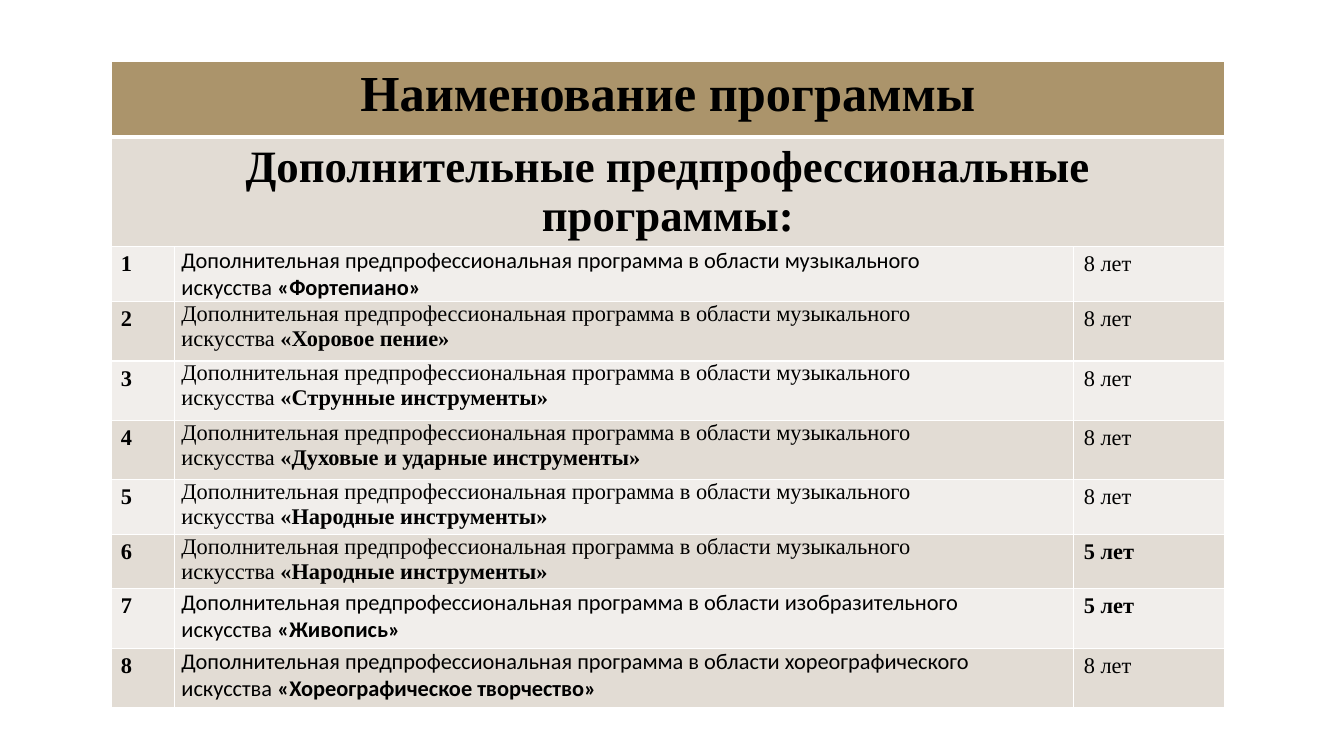
from dataclasses import dataclass

from lxml import etree
from pptx import Presentation
from pptx.dml.color import RGBColor
from pptx.enum.text import PP_ALIGN
from pptx.oxml.ns import qn
from pptx.table import Table, _Cell
from pptx.util import Inches, Pt

CENTER, LEFT, JUSTIFY = PP_ALIGN.CENTER, PP_ALIGN.LEFT, PP_ALIGN.JUSTIFY
BLACK = RGBColor(0x00, 0x00, 0x00)
WHITE = RGBColor(0xFF, 0xFF, 0xFF)
GOLD = RGBColor(0xAB, 0x94, 0x6B)
DARK = RGBColor(0xE2, 0xDC, 0xD4)
LIGHT = RGBColor(0xF1, 0xEE, 0xEB)
SERIF, SANS = "Times New Roman", "Calibri"
WIDTHS = (0.63, 8.92, 1.5)


@dataclass
class Course:
    name: str
    term: str = "8 лет"
    field: str = "музыкального"
    font: str = SERIF
    height: float = 0.59
    bold: bool = False


@dataclass
class Head:
    text: str
    size: int
    fill: RGBColor
    height: float


HEADS = [
    Head("Наименование программы", 36, GOLD, 0.75),
    Head("Дополнительные предпрофессиональные программы:", 32, DARK, 1.08),
]
COURSES = [
    Course("Фортепиано", font=SANS, height=0.54),
    Course("Хоровое пение"),
    Course("Струнные инструменты"),
    Course("Духовые и ударные инструменты"),
    Course("Народные инструменты", height=0.54),
    Course("Народные инструменты", "5 лет", height=0.54, bold=True),
    Course("Живопись", "5 лет", "изобразительного", SANS, bold=True),
    Course("Хореографическое творчество", field="хореографического", font=SANS),
]


def paint(cell: _Cell, fill: RGBColor, top: int = 1, bottom: int = 1) -> None:
    """Give a cell its white borders and its fill."""
    props = cell._tc.get_or_add_tcPr()
    for tag, width in (("lnL", 1), ("lnR", 1), ("lnT", top), ("lnB", bottom)):
        line = etree.SubElement(props, qn(f"a:{tag}"), w=str(Pt(width)))
        solid = etree.SubElement(line, qn("a:solidFill"))
        etree.SubElement(solid, qn("a:srgbClr"), val=str(WHITE))
    cell.fill.solid()
    cell.fill.fore_color.rgb = fill


def write(cell: _Cell, lines: list[str], size: int = 16, font: str = SERIF,
          bold: bool = False, align: PP_ALIGN = LEFT) -> None:
    """Write one paragraph for each line."""
    frame = cell.text_frame
    for i, line in enumerate(lines):
        par = frame.add_paragraph() if i else frame.paragraphs[0]
        par.text = line
        par.alignment = align
        par.font.size = Pt(size)
        par.font.name = font
        par.font.bold = bold
        par.font.color.rgb = BLACK
        for run in par.runs:
            run.font.size = Pt(size)
            run.font.name = font
            run.font.bold = bold
            run.font.color.rgb = BLACK


def add_head(table: Table, row: int, head: Head) -> None:
    table.rows[row].height = Inches(head.height)
    for cell in table.rows[row].cells:
        paint(cell, head.fill, 1 if row == 0 else 3, 3 if row == 0 else 1)
    first = table.cell(row, 0)
    first.merge(table.cell(row, len(WIDTHS) - 1))
    write(first, [head.text], head.size, bold=True, align=CENTER)


def add_course(table: Table, row: int, num: int, course: Course) -> None:
    table.rows[row].height = Inches(course.height)
    for cell in table.rows[row].cells:
        paint(cell, LIGHT if num % 2 else DARK)
    index, title, term = table.rows[row].cells
    write(index, [str(num)], bold=True)
    write(term, [course.term], bold=course.bold)

    # Programme name, with its subject in bold
    title.margin_left = title.margin_right = Inches(0.07)
    title.margin_top = title.margin_bottom = 0
    align = JUSTIFY if course.font == SANS else LEFT
    write(title, [
        f"Дополнительная предпрофессиональная программа в области {course.field}",
        "искусства ",
    ], font=course.font, align=align)
    run = title.text_frame.paragraphs[1].add_run()
    run.text = f"«{course.name}»"
    run.font.size = Pt(16)
    run.font.name = course.font
    run.font.bold = True
    run.font.color.rgb = BLACK


def main() -> None:
    deck = Presentation()
    deck.slide_width, deck.slide_height = Inches(13.33), Inches(7.5)
    slide = deck.slides.add_slide(deck.slide_layouts[6])

    # Table of programmes
    count = len(HEADS) + len(COURSES)
    high = sum(part.height for part in HEADS + COURSES)
    table = slide.shapes.add_table(
        count, len(WIDTHS), Inches(1.1), Inches(0.61),
        Inches(sum(WIDTHS)), Inches(high)).table
    table.first_row = table.horz_banding = False
    for column, width in zip(table.columns, WIDTHS):
        column.width = Inches(width)

    # Heading rows, then numbered rows
    for row, head in enumerate(HEADS):
        add_head(table, row, head)
    for num, course in enumerate(COURSES, 1):
        add_course(table, len(HEADS) + num - 1, num, course)

    deck.save("out.pptx")


if __name__ == "__main__":
    main()
